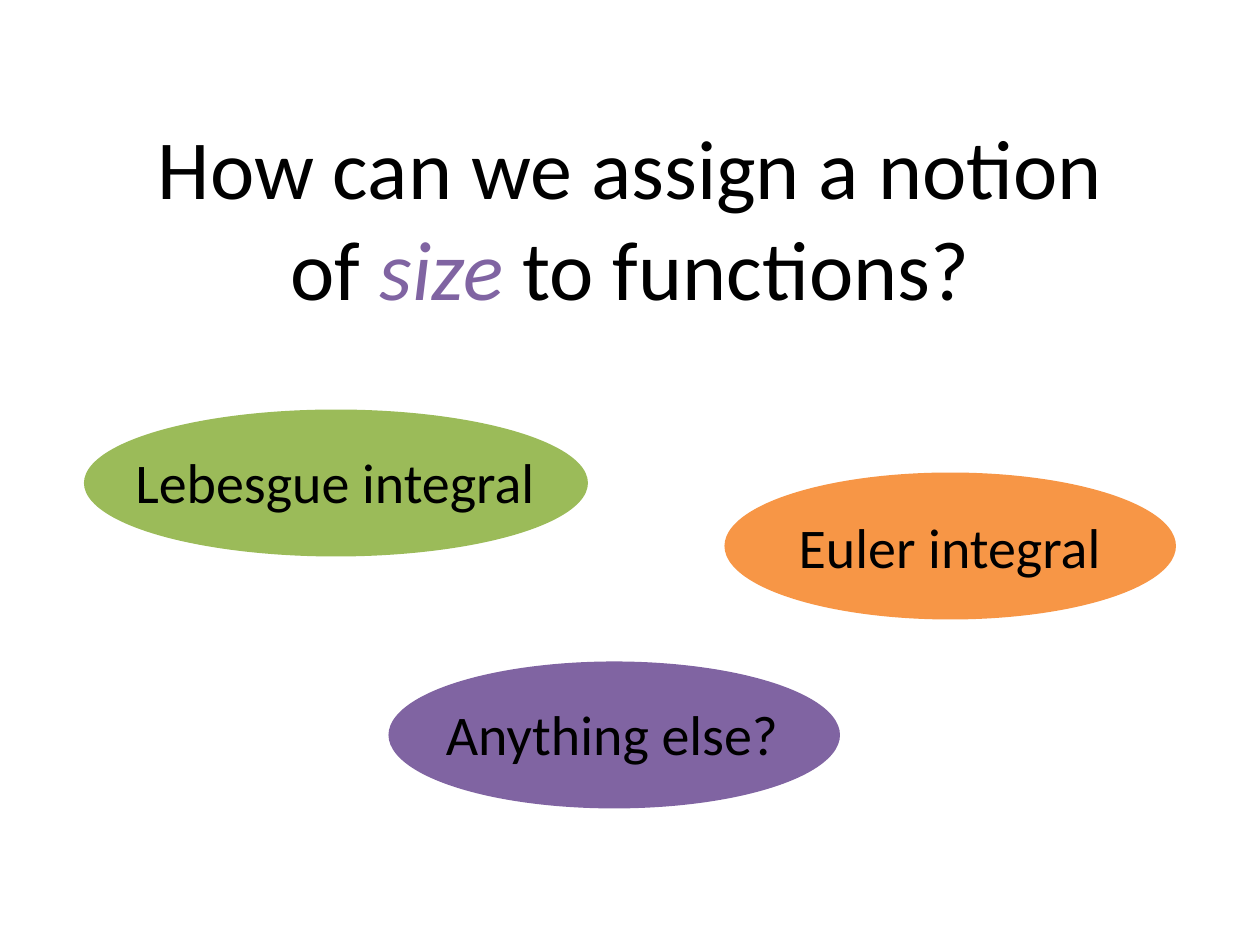
from pptx import Presentation
from pptx.dml.color import RGBColor
from pptx.enum.shapes import MSO_SHAPE
from pptx.enum.text import MSO_ANCHOR, MSO_AUTO_SIZE, PP_ALIGN
from pptx.util import Inches, Pt

OVAL = MSO_SHAPE.OVAL
TOP = MSO_ANCHOR.TOP
GROW = MSO_AUTO_SIZE.SHAPE_TO_FIT_TEXT
CENTER = PP_ALIGN.CENTER
LEFT = PP_ALIGN.LEFT
FONT = "Calibri"
HEX = {"ink": "000000", "green": "9BBB59", "orange": "F79646", "purple": "8064A2"}
COLOR = {name: RGBColor.from_string(code) for name, code in HEX.items()}


def style(run, size, color="ink"):
    run.font.name = FONT
    run.font.size = Pt(size)
    run.font.color.rgb = COLOR[color]


deck = Presentation()
deck.slide_width, deck.slide_height = Inches(10), Inches(7.5)
cell = deck.slide_width // 120  # grid of 120 columns by 90 rows
slide = deck.slides.add_slide(deck.slide_layouts[5])

# Question
title = slide.shapes.title
title.left, title.top = 12 * cell, Inches(0.87)
title.width, title.height = 96 * cell, Inches(1.72)
frame = title.text_frame
frame.word_wrap = True
frame.auto_size = GROW
frame.vertical_anchor = TOP
line = frame.paragraphs[0]
line.alignment = CENTER
for words, color in [
    ("How can we assign a notion of ", "ink"),
    ("size ", "purple"),
    ("to functions?", "ink"),
]:
    run = line.add_run()
    run.text = words
    style(run, 48, color)
    run.font.italic = color == "purple"

# Answers: words, fill, column, row, columns wide, label box in inches, alignment
answers = [
    ("Lebesgue integral", "green", 8, 39, 48, (0.96, 3.5, 3.4), CENTER),
    ("Euler integral", "orange", 69, 45, 43, (6.24, 4.02, 2.62), LEFT),
    ("Anything else?", "purple", 37, 63, 43, (3.44, 5.5, 2.87), LEFT),
]
for words, color, col, row, wide, (x, y, w), align in answers:
    group = slide.shapes.add_group_shape()
    oval = group.shapes.add_shape(OVAL, col * cell, row * cell, wide * cell, 14 * cell)
    oval.shadow.inherit = False
    oval.fill.solid()
    oval.fill.fore_color.rgb = COLOR[color]
    oval.line.fill.background()

    label = group.shapes.add_textbox(Inches(x), Inches(y), Inches(w), Inches(0.64))
    frame = label.text_frame
    frame.word_wrap = False
    frame.auto_size = GROW
    frame.text = words
    frame.paragraphs[0].alignment = align
    style(frame.paragraphs[0].runs[0], 32)

deck.save("out.pptx")
